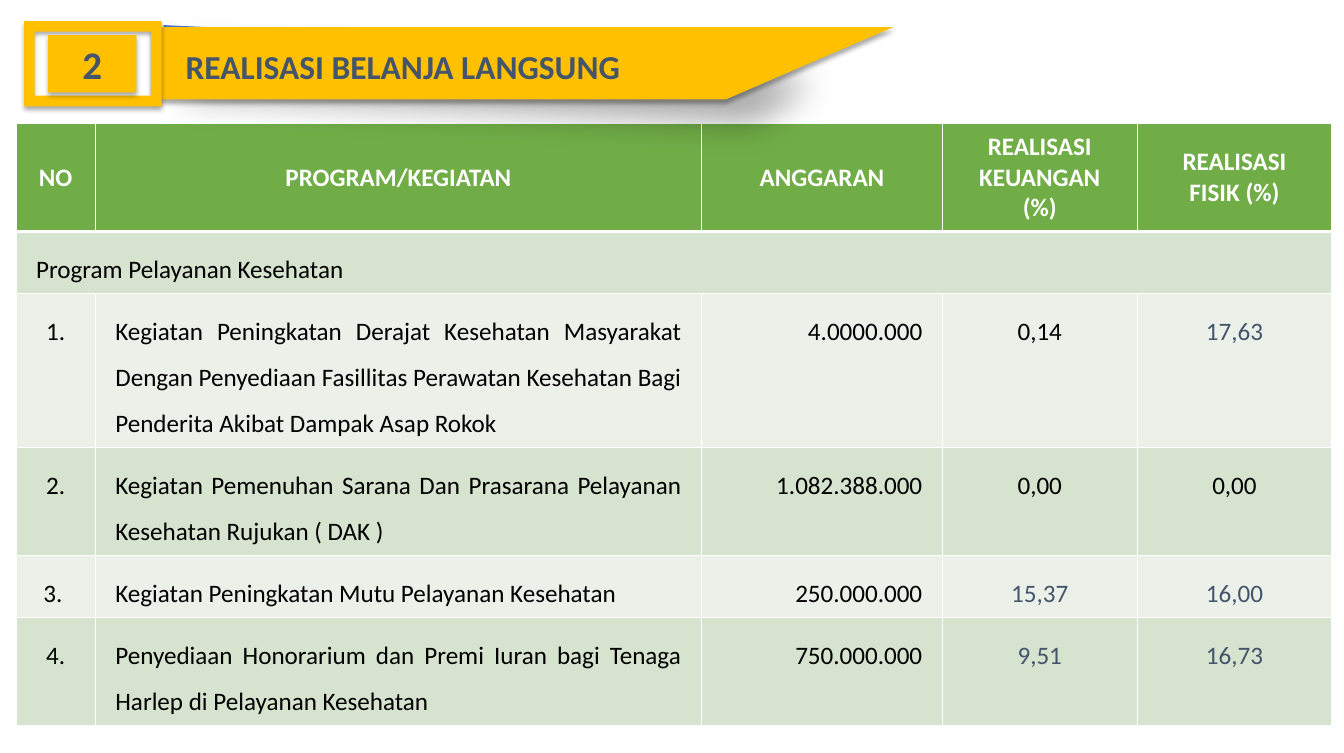
from lxml.etree import SubElement
from pptx import Presentation
from pptx.dml.color import RGBColor
from pptx.enum.shapes import MSO_SHAPE
from pptx.enum.text import MSO_ANCHOR, PP_ALIGN
from pptx.oxml.ns import qn
from pptx.util import Inches, Pt

GOLD, BLUE, GREEN, SLATE = "FFC000", "4472C4", "70AD47", "44546A"
WHITE, BLACK = "FFFFFF", "000000"
BANDS = ["D5E3CF", "EBF1E9"]
SOFT = (32, 3.5, 2.2, 90)
DEEP = (35, 25, 25, 45)

COLUMNS = [0.79, 6.04, 2.4, 1.94, 1.94]
HEIGHTS = [0.62, 0.38, 0.85, 0.58, 0.38, 0.79]
HEADERS = ["NO", "PROGRAM/KEGIATAN", "ANGGARAN", "REALISASI KEUANGAN (%)",
           "REALISASI\nFISIK (%)"]
PROGRAM = "Program Pelayanan Kesehatan"
ACTIVITIES = [
    ["1.", "Kegiatan Peningkatan Derajat Kesehatan Masyarakat Dengan Penyediaan "
     "Fasillitas Perawatan Kesehatan Bagi Penderita Akibat Dampak Asap Rokok",
     "4.0000.000", "0,14", "17,63"],
    ["2.", "Kegiatan Pemenuhan Sarana Dan Prasarana Pelayanan Kesehatan Rujukan ( DAK )",
     "1.082.388.000", "0,00", "0,00"],
    ["3. ", "Kegiatan Peningkatan Mutu Pelayanan Kesehatan",
     "250.000.000", "15,37", "16,00"],
    ["4.", "Penyediaan Honorarium dan Premi Iuran bagi Tenaga Harlep di Pelayanan Kesehatan",
     "750.000.000", "9,51", "16,73"],
]
ALIGNS = [PP_ALIGN.CENTER, PP_ALIGN.JUSTIFY, PP_ALIGN.RIGHT, PP_ALIGN.CENTER, PP_ALIGN.CENTER]
SLATE_VALUES = {"17,63", "15,37", "16,00", "9,51", "16,73"}

BACK_STRIP = [(1.63, 0.25), (7.74, 0.53), (7.73, 0.66), (7.26, 0.97), (1.61, 0.71)]
BANNER = [(1.52, 0.27), (8.9, 0.27), (7.23, 0.99), (1.52, 0.99)]


def rgb(color):
    return RGBColor.from_string(color)


def apply(obj, fmt):
    for name, value in fmt.items():
        setattr(obj, name, value)


def write(tf, text, size, color, bold, para):
    for i, line in enumerate(text.split("\n")):
        p = tf.add_paragraph() if i else tf.paragraphs[0]
        apply(p, para)
        r = p.add_run()
        r.text = line
        apply(r.font, {"name": "Calibri", "size": Pt(size), "bold": bold})
        r.font.color.rgb = rgb(color)


def paint(shape, color, shadow):
    shape.fill.solid()
    shape.fill.fore_color.rgb = rgb(color)
    shape.line.fill.background()
    shape.shadow.inherit = False
    alpha, blur, dist, angle = shadow
    effects = shape._element.spPr.find(qn("a:effectLst"))
    outer = SubElement(effects, qn("a:outerShdw"), blurRad=str(Pt(blur)), dist=str(Pt(dist)),
                       dir=str(angle * 60000), algn="tl", rotWithShape="0")
    tone = SubElement(outer, qn("a:srgbClr"), val=BLACK)
    SubElement(tone, qn("a:alpha"), val=str(alpha * 1000))


def add_outline(s, points, color, shadow):
    corners = [(Inches(x), Inches(y)) for x, y in points]
    builder = s.shapes.build_freeform(*corners[0])
    builder.add_line_segments(corners[1:])
    paint(builder.convert_to_shape(), color, shadow)


def add_box(s, kind, box, color):
    sp = s.shapes.add_shape(kind, *map(Inches, box))
    paint(sp, color, SOFT)
    return sp


def add_title(s, text, box):
    tf = s.shapes.add_textbox(*map(Inches, box)).text_frame
    apply(tf, {"word_wrap": True, "vertical_anchor": MSO_ANCHOR.MIDDLE, "margin_left": 0})
    write(tf, text, 24, SLATE, True, {"alignment": PP_ALIGN.LEFT})


def set_borders(cell, widths):
    tcPr = cell._tc.get_or_add_tcPr()
    for side, width in zip("LRTB", widths):
        ln = SubElement(tcPr, qn(f"a:ln{side}"), w=str(Pt(width)))
        SubElement(SubElement(ln, qn("a:solidFill")), qn("a:srgbClr"), val=WHITE)


def style_cell(cell, fill, borders, anchor):
    set_borders(cell, borders)
    cell.fill.solid()
    cell.fill.fore_color.rgb = rgb(fill)
    apply(cell, {"margin_left": Inches(0.2), "margin_right": Inches(0.2),
                 "margin_top": Inches(0.08), "margin_bottom": Inches(0.08),
                 "vertical_anchor": anchor})


def add_budget_table(s):
    table = s.shapes.add_table(len(HEIGHTS), len(COLUMNS), Inches(0.16), Inches(1.23),
                               Inches(sum(COLUMNS)), Inches(sum(HEIGHTS))).table
    for column, width in zip(table.columns, COLUMNS):
        column.width = Inches(width)
    for row, height in zip(table.rows, HEIGHTS):
        row.height = Inches(height)
    for c, text in enumerate(HEADERS):
        cell = table.cell(0, c)
        style_cell(cell, GREEN, (1, 1, 1, 3), MSO_ANCHOR.MIDDLE)
        write(cell.text_frame, text, 18, WHITE, True, {"alignment": PP_ALIGN.CENTER})
    table.cell(1, 0).merge(table.cell(1, len(COLUMNS) - 1))
    body = [[PROGRAM] + [""] * (len(COLUMNS) - 1)] + ACTIVITIES
    for i, values in enumerate(body):
        for c, text in enumerate(values):
            cell = table.cell(i + 1, c)
            style_cell(cell, BANDS[i % 2], (1, 1, 1 if i else 3, 1), MSO_ANCHOR.TOP)
            if text:
                color = SLATE if text in SLATE_VALUES else BLACK
                align = ALIGNS[c] if i else PP_ALIGN.LEFT
                write(cell.text_frame, text, 18, color, False,
                      {"alignment": align, "line_spacing": 1.5})


def main():
    prs = Presentation()
    apply(prs, {"slide_width": Inches(13.39), "slide_height": Inches(7.5)})
    s = prs.slides.add_slide(prs.slide_layouts[6])
    add_budget_table(s)
    add_outline(s, BACK_STRIP, BLUE, DEEP)
    add_outline(s, BANNER, GOLD, SOFT)
    add_box(s, MSO_SHAPE.FRAME, (0.24, 0.21, 1.37, 0.85), GOLD)
    number = add_box(s, MSO_SHAPE.RECTANGLE, (0.48, 0.35, 0.88, 0.57), GOLD)
    number.text_frame.vertical_anchor = MSO_ANCHOR.MIDDLE
    write(number.text_frame, "2", 28, SLATE, True, {"alignment": PP_ALIGN.CENTER})
    add_title(s, "REALISASI BELANJA LANGSUNG", (1.85, 0.41, 5.63, 0.5))
    prs.save("out.pptx")


if __name__ == "__main__":
    main()
